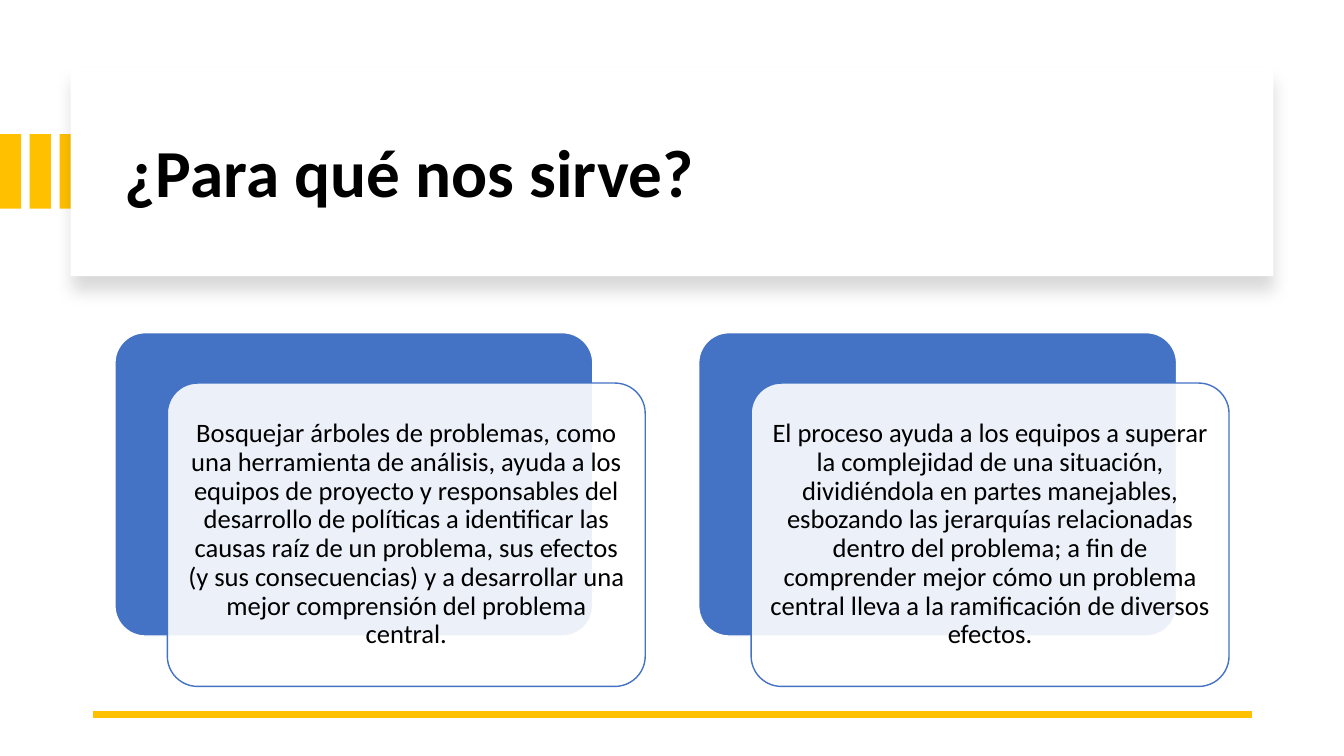
"""Build the slide '¿Para qué nos sirve?' with a title card and two text cards."""
from dataclasses import dataclass

from lxml import etree
from pptx import Presentation
from pptx.dml.color import RGBColor
from pptx.enum.shapes import MSO_CONNECTOR, MSO_SHAPE
from pptx.enum.text import MSO_ANCHOR, PP_ALIGN
from pptx.oxml.ns import qn
from pptx.util import Inches, Pt

RECTANGLE = MSO_SHAPE.RECTANGLE
ROUNDED = MSO_SHAPE.ROUNDED_RECTANGLE
STRAIGHT = MSO_CONNECTOR.STRAIGHT
MIDDLE = MSO_ANCHOR.MIDDLE
LEFT, CENTER = PP_ALIGN.LEFT, PP_ALIGN.CENTER


@dataclass(frozen=True)
class Theme:
    font: str = "Calibri"
    gold: RGBColor = RGBColor(0xFF, 0xC0, 0x00)
    blue: RGBColor = RGBColor(0x44, 0x72, 0xC4)
    white: RGBColor = RGBColor(0xFF, 0xFF, 0xFF)
    black: RGBColor = RGBColor(0x00, 0x00, 0x00)
    title_size: Pt = Pt(48)
    body_size: Pt = Pt(19)


theme = Theme()

deck = Presentation()
deck.slide_width = Inches(13.33)
deck.slide_height = Inches(7.5)
page = deck.slides.add_slide(deck.slide_layouts[6])


def add_block(kind, left, top, width, height, fill, outline=None):
    block = page.shapes.add_shape(kind, Inches(left), Inches(top), Inches(width), Inches(height))
    block.fill.solid()
    block.fill.fore_color.rgb = fill
    if outline is None:
        block.line.fill.background()
    else:
        block.line.color.rgb = outline
        block.line.width = Pt(1)
    block.shadow.inherit = False
    if kind == ROUNDED:
        block.adjustments[0] = 0.1
    return block


def add_text(left, top, width, height, text, size, align, inset, bold=False):
    box = page.shapes.add_textbox(Inches(left), Inches(top), Inches(width), Inches(height))
    frame = box.text_frame
    frame.word_wrap = True
    frame.vertical_anchor = MIDDLE
    frame.margin_left = frame.margin_right = Inches(inset)
    frame.margin_top = frame.margin_bottom = Inches(min(inset, 0.08))
    para = frame.paragraphs[0]
    para.alignment = align
    para.line_spacing = 0.9
    span = para.add_run()
    span.text = text
    span.font.name = theme.font
    span.font.size = size
    span.font.bold = bold
    span.font.color.rgb = theme.black


for index in range(3):
    add_block(RECTANGLE, index * 0.295, 1.33, 0.21, 0.74, theme.gold)

title_card = add_block(RECTANGLE, 0.7, 0.67, 11.93, 2.07, theme.white)
effects = title_card.element.spPr.find(qn("a:effectLst"))
shadow = etree.SubElement(
    effects, qn("a:outerShdw"),
    blurRad=str(Pt(11)), dist=str(Pt(10)), dir="5400000", algn="t", rotWithShape="0",
)
shadow_color = etree.SubElement(shadow, qn("a:srgbClr"), val=str(theme.black))
etree.SubElement(shadow_color, qn("a:alpha"), val="15000")
add_text(1.14, 0.89, 11.13, 1.7, "¿Para qué nos sirve?", theme.title_size, LEFT, 0.1, bold=True)

footer_rule = page.shapes.add_connector(
    STRAIGHT, Inches(12.42), Inches(7.09), Inches(0.92), Inches(7.09)
)
footer_rule.line.color.rgb = theme.gold
footer_rule.line.width = Pt(4.5)
etree.SubElement(footer_rule.element.spPr, qn("a:effectLst"))

purposes = [
    "Bosquejar árboles de problemas, como una herramienta de análisis, ayuda a los equipos "
    "de proyecto y responsables del desarrollo de políticas a identificar las causas raíz de "
    "un problema, sus efectos (y sus consecuencias) y a desarrollar una mejor comprensión "
    "del problema central.",
    "El proceso ayuda a los equipos a superar la complejidad de una situación, dividiéndola "
    "en partes manejables, esbozando las jerarquías relacionadas dentro del problema; a fin "
    "de comprender mejor cómo un problema central lleva a la ramificación de diversos efectos.",
]
card_width, card_height = 4.74, 3.01
for index, purpose in enumerate(purposes):
    left = 1.14 + index * 5.79
    add_block(ROUNDED, left, 3.3, card_width, card_height, theme.blue, theme.white)
    front = add_block(
        ROUNDED, left + 0.52, 3.8, card_width, card_height, theme.white, theme.blue
    )
    front_color = front.element.spPr.find(qn("a:solidFill")).find(qn("a:srgbClr"))
    etree.SubElement(front_color, qn("a:alpha"), val="90000")
    add_text(left + 0.61, 3.89, 4.56, 2.83, purpose, theme.body_size, CENTER, 0.08)

deck.save("out.pptx")
